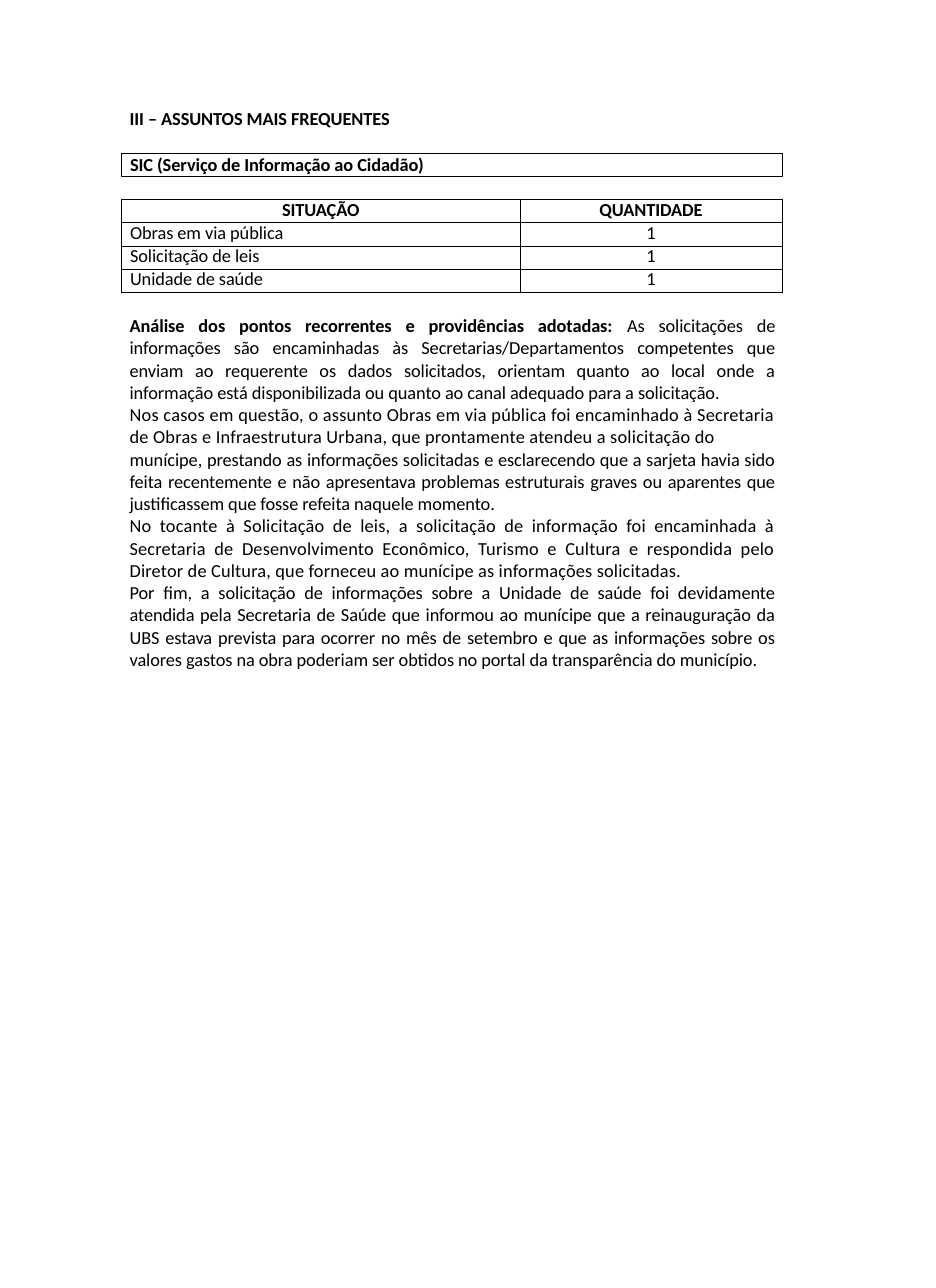
from lxml import etree
from pptx import Presentation
from pptx import util as u
from pptx.dml import color
from pptx.enum import shapes, text
from pptx.oxml import ns

COLOURS = {"ink": "000000"}
FONT = {"name": "Calibri", "size": u.Pt(12)}
FRAME = {
    "margin_left": u.Cm(0),
    "margin_top": u.Cm(0),
    "margin_right": u.Cm(0),
    "margin_bottom": u.Cm(0),
    "vertical_anchor": text.MSO_ANCHOR.TOP,
}
PLAIN_PARA = {
    "alignment": text.PP_ALIGN.LEFT,
    "space_before": u.Pt(0),
    "space_after": u.Pt(0),
}
INDENT = u.Cm(0.2)
ROW_SPACING = u.Pt(14.1)
TIGHT = -5

HEADING = "III – ASSUNTOS MAIS FREQUENTES"
SERVICE = "SIC (Serviço de Informação ao Cidadão)"
SUBJECTS = [
    ("SITUAÇÃO", "QUANTIDADE"),
    ("Obras em via pública", "1"),
    ("Solicitação de leis", "1"),
    ("Unidade de saúde", "1"),
]
ANALYSIS = [
    (TIGHT, [
        ("Análise dos pontos recorrentes e providências adotadas: ", True),
        ("As solicitações de informações são encaminhadas às Secretarias/Departamentos "
         "competentes que enviam ao requerente os dados solicitados, orientam quanto ao "
         "local onde a informação está disponibilizada ou quanto ao canal adequado para "
         "a solicitação.", False)]),
    (15, [
        ("Nos casos em questão, o assunto Obras em via pública foi encaminhado à "
         "Secretaria de Obras e Infraestrutura Urbana, que prontamente atendeu a "
         "solicitação do", False)]),
    (TIGHT, [
        ("munícipe, prestando as informações solicitadas e esclarecendo que a sarjeta "
         "havia sido feita recentemente e não apresentava problemas estruturais graves "
         "ou aparentes que justificassem que fosse refeita naquele momento.", False)]),
    (10, [
        ("No tocante à Solicitação de leis, a solicitação de informação foi encaminhada "
         "à Secretaria de Desenvolvimento Econômico, Turismo e Cultura e respondida pelo "
         "Diretor de Cultura, que forneceu ao munícipe as informações solicitadas.",
         False)]),
    (TIGHT, [
        ("Por fim, a solicitação de informações sobre a Unidade de saúde foi devidamente "
         "atendida pela Secretaria de Saúde que informou ao munícipe que a reinauguração "
         "da UBS estava prevista para ocorrer no mês de setembro e que as informações "
         "sobre os valores gastos na obra poderiam ser obtidos no portal da "
         "transparência do município.", False)]),
]


def apply(target, values):
    for name, value in values.items():
        setattr(target, name, value)


def ink():
    return color.RGBColor.from_string(COLOURS["ink"])


def place(shape, box):
    apply(shape, dict(zip(("left", "top", "width", "height"), map(u.Cm, box))))


def write(para, spans, tracking=TIGHT, **values):
    apply(para, {**PLAIN_PARA, **values})
    for words, bold in spans:
        span = para.add_run()
        span.text = words
        apply(span.font, {**FONT, "bold": bold})
        span.font.color.rgb = ink()
        span._r.get_or_add_rPr().set("spc", str(tracking))


def prepare(frame, **values):
    apply(frame, {**FRAME, "word_wrap": True,
                  "auto_size": text.MSO_AUTO_SIZE.NONE, **values})


def add_heading(page, box):
    title = page.shapes.title
    place(title, box)
    prepare(title.text_frame)
    write(title.text_frame.paragraphs[0], [(HEADING, True)], space_before=u.Pt(1))


def add_service(page, box):
    banner = page.shapes.add_shape(shapes.MSO_SHAPE.RECTANGLE, *map(u.Cm, box))
    banner.shadow.inherit = False
    banner.fill.background()
    banner.line.color.rgb = ink()
    banner.line.width = u.Pt(0.48)
    prepare(banner.text_frame, margin_left=INDENT)
    write(banner.text_frame.paragraphs[0], [(SERVICE, True)], line_spacing=u.Pt(14.2))


def add_borders(cell):
    props = cell._tc.get_or_add_tcPr()
    for position, side in enumerate(("lnL", "lnR", "lnT", "lnB")):
        line = etree.Element(ns.qn("a:" + side), w=str(u.Pt(0.5)))
        fill = etree.SubElement(line, ns.qn("a:solidFill"))
        etree.SubElement(fill, ns.qn("a:srgbClr"), val=COLOURS["ink"])
        props.insert(position, line)


def add_subjects(page, box):
    left, top, width, height = map(u.Cm, box)
    table = page.shapes.add_table(len(SUBJECTS), 2, left, top, width, height).table
    apply(table, {"first_row": False, "horz_banding": False})
    table.columns[0].width = u.Cm(9.2)
    table.columns[1].width = width - u.Cm(9.2)
    for row, values in enumerate(SUBJECTS):
        for column, value in enumerate(values):
            cell = table.cell(row, column)
            label = row > 0 and column == 0
            apply(cell, {**FRAME, "margin_left": INDENT if label else u.Cm(0)})
            cell.fill.background()
            add_borders(cell)
            align = text.PP_ALIGN.LEFT if label else text.PP_ALIGN.CENTER
            write(cell.text_frame.paragraphs[0], [(value, row == 0)],
                  alignment=align, line_spacing=ROW_SPACING)


def add_analysis(page, box):
    body = page.placeholders[1]
    place(body, box)
    frame = body.text_frame
    prepare(frame)
    for index, (tracking, spans) in enumerate(ANALYSIS):
        para = frame.add_paragraph() if index else frame.paragraphs[0]
        write(para, spans, tracking, alignment=text.PP_ALIGN.JUSTIFY,
              line_spacing=1.01, space_before=u.Pt(0 if index else 0.8))
        props = para._p.get_or_add_pPr()
        props.set("marL", "0")
        props.set("indent", "0")
        etree.SubElement(props, ns.qn("a:buNone"))


def main():
    deck = Presentation()
    apply(deck, {"slide_width": u.Cm(21.59), "slide_height": u.Cm(29.7)})
    page = deck.slides.add_slide(deck.slide_layouts[1])
    add_heading(page, (2.99, 2.46, 7, 0.58))
    add_service(page, (2.8, 3.54, 15.24, 0.54))
    add_subjects(page, (2.8, 4.6, 15.24, 2.14))
    add_analysis(page, (2.99, 7.24, 14.9, 8.33))
    deck.save("out.pptx")


if __name__ == "__main__":
    main()
